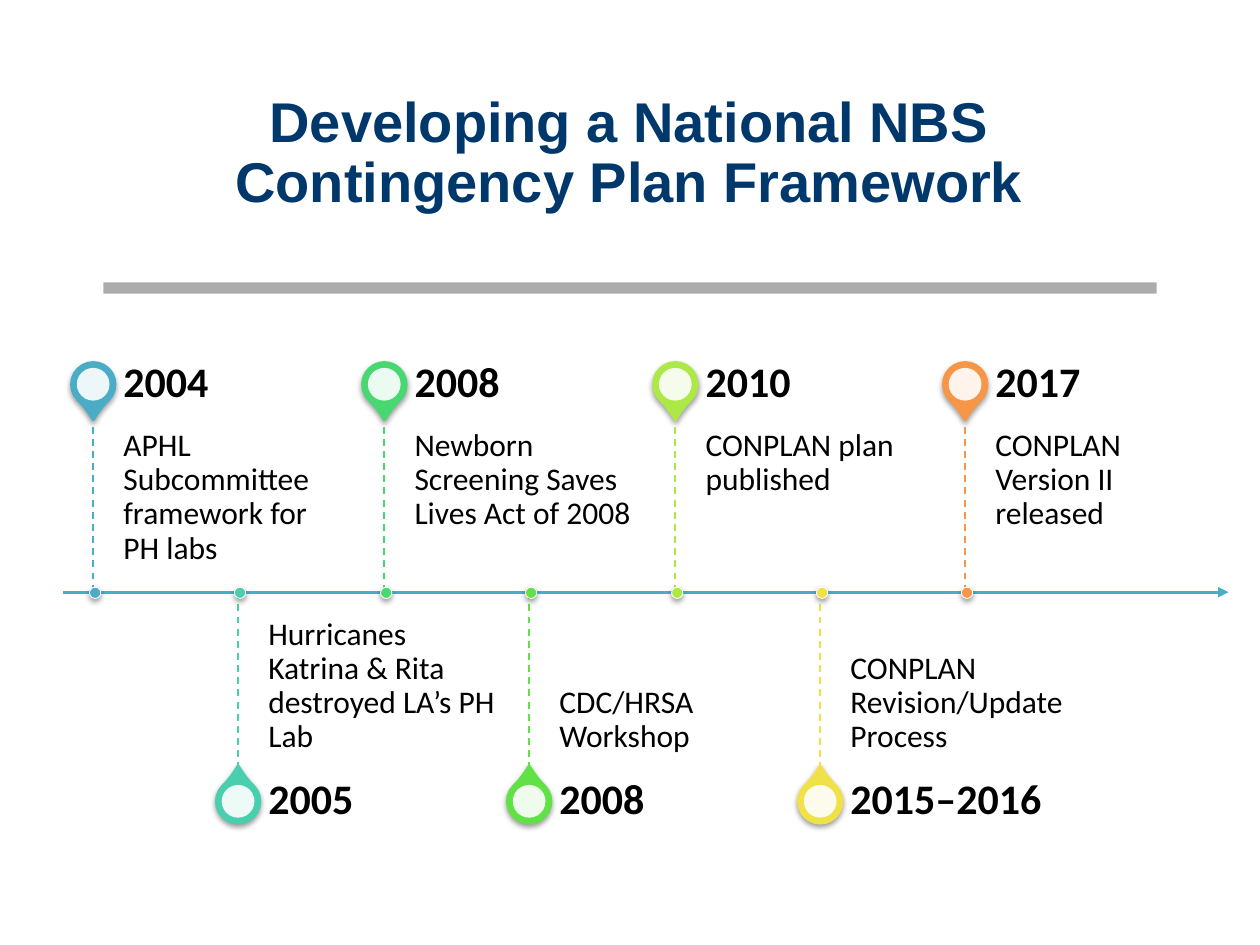
from lxml import etree
from pptx import Presentation
from pptx.dml.color import RGBColor
from pptx.enum.dml import MSO_LINE
from pptx.enum.shapes import MSO_CONNECTOR, MSO_SHAPE
from pptx.enum.text import MSO_ANCHOR, PP_ALIGN
from pptx.oxml import parse_xml
from pptx.oxml.ns import nsdecls, qn
from pptx.util import Emu, Pt

PX = 9144
RECT, OVAL, TEAR = MSO_SHAPE.RECTANGLE, MSO_SHAPE.OVAL, MSO_SHAPE.TEAR
STRAIGHT, DASH = MSO_CONNECTOR.STRAIGHT, MSO_LINE.DASH
TOP, MIDDLE, BOTTOM = MSO_ANCHOR.TOP, MSO_ANCHOR.MIDDLE, MSO_ANCHOR.BOTTOM
LEFT, CENTER = PP_ALIGN.LEFT, PP_ALIGN.CENTER
COLORS = {"title": "00386B", "rule": "808080", "axis": "4BACC6",
          "text": "000000", "white": "FFFFFF"}
SHADOW = (f'<a:outerShdw {nsdecls("a")} blurRad="40000" dist="20000" dir="5400000" '
          'rotWithShape="0"><a:srgbClr val="000000"><a:alpha val="38000"/>'
          '</a:srgbClr></a:outerShdw>')
AXIS_Y, FIRST_X, STEP = 470, 74, 115.4
EVENTS = [
    ("2004", "APHL Subcommittee framework for PH labs", "4BACC6"),
    ("2005", "Hurricanes Katrina & Rita destroyed LA’s PH Lab", "49CFAE"),
    ("2008", "Newborn Screening Saves Lives Act of 2008", "47D872"),
    ("2008", "CDC/HRSA Workshop", "60E146"),
    ("2010", "CONPLAN plan published", "ACE946"),
    ("2015–2016", "CONPLAN Revision/Update Process", "F0E146"),
    ("2017", "CONPLAN Version II released", "F79646"),
]

prs = Presentation()
prs.slide_width, prs.slide_height = Emu(1000 * PX), Emu(750 * PX)
slide = prs.slides.add_slide(prs.slide_layouts[5])
shapes = slide.shapes


def add_shape(kind, box, fill, line=None, width=0, alpha=100, shadow=False):
    s = shapes.add_shape(kind, *[Emu(v * PX) for v in box])
    s.fill.solid()
    s.fill.fore_color.rgb = RGBColor.from_string(fill)
    if alpha < 100:
        clr = s.element.spPr.find(".//" + qn("a:srgbClr"))
        etree.SubElement(clr, qn("a:alpha"), val=str(alpha * 1000))
    if line:
        s.line.color.rgb = RGBColor.from_string(line)
        s.line.width = Pt(width)
    else:
        s.line.fill.background()
    s.shadow.inherit = False
    if shadow:
        s.element.spPr.find(qn("a:effectLst")).append(parse_xml(SHADOW))
    return s


def write_text(s, box, text, insets, anchor, align, font):
    s.left, s.top, s.width, s.height = [Emu(v * PX) for v in box]
    tf = s.text_frame
    tf.word_wrap = True
    tf.vertical_anchor = anchor
    for side, value in zip(("left", "top", "right", "bottom"), insets):
        setattr(tf, f"margin_{side}", Emu(value * PX))
    p = tf.paragraphs[0]
    p.alignment, p.line_spacing = align, 0.9
    r = p.add_run()
    r.text = text
    for name, value in font.items():
        if name == "color":
            r.font.color.rgb = RGBColor.from_string(value)
        else:
            setattr(r.font, name, value)


title_font = {"name": "Arial", "size": Pt(32), "bold": True, "color": COLORS["title"]}
body_font = {"name": "Calibri", "size": Pt(18), "color": COLORS["text"]}
year_font = {"name": "Calibri", "size": Pt(24), "bold": True, "color": COLORS["text"]}

write_text(shapes.title, (71, 50, 857, 145),
           "Developing a National NBS Contingency Plan Framework",
           (10, 5, 10, 5), MIDDLE, CENTER, title_font)
add_shape(RECT, (82, 224, 836, 9), COLORS["rule"], alpha=65)

lines = [(50, AXIS_Y, 975, AXIS_Y, COLORS["axis"], 1.5)]
centers = [FIRST_X + round(i * STEP) for i in range(len(EVENTS))]
for i, (x, (year, text, color)) in enumerate(zip(centers, EVENTS)):
    above = i % 2 == 0
    pin_y = 288 if above else 619
    pin = add_shape(TEAR, (x - 17, pin_y, 34, 34), color, color, 2, shadow=True)
    pin.adjustments[0] = 1.15
    pin.rotation = 135 if above else 315
    add_shape(OVAL, (x - 13, pin_y + 4, 26, 26), COLORS["white"], alpha=90)

    body_y, year_y = (329, 280) if above else (AXIS_Y, 611)
    insets, anchor = ((0, 12, 12, 19), TOP) if above else ((0, 19, 0, 12), BOTTOM)
    write_text(shapes.add_textbox(0, 0, 0, 0), (x + 24, body_y, 184, 141),
               text, insets, anchor, LEFT, body_font)
    write_text(shapes.add_textbox(0, 0, 0, 0), (x + 24, year_y, 184, 50),
               year, (0, 0, 17, 0), MIDDLE, LEFT, year_font)
    lines.append((x, body_y, x, body_y + 141, color, 1))

for x1, y1, x2, y2, color, width in lines:
    c = shapes.add_connector(STRAIGHT, *[Emu(v * PX) for v in (x1, y1, x2, y2)])
    c.line.color.rgb = RGBColor.from_string(color)
    c.line.width = Pt(width)
    if y1 == y2:
        etree.SubElement(c.line._get_or_add_ln(), qn("a:tailEnd"), type="triangle")
    else:
        c.line.dash_style = DASH
    etree.SubElement(c.element.spPr, qn("a:effectLst"))

for x, (year, text, color) in zip(centers, EVENTS):
    add_shape(OVAL, (x - 3, AXIS_Y - 4, 9, 9), color, COLORS["white"], 0.5, shadow=True)

prs.save("out.pptx")
